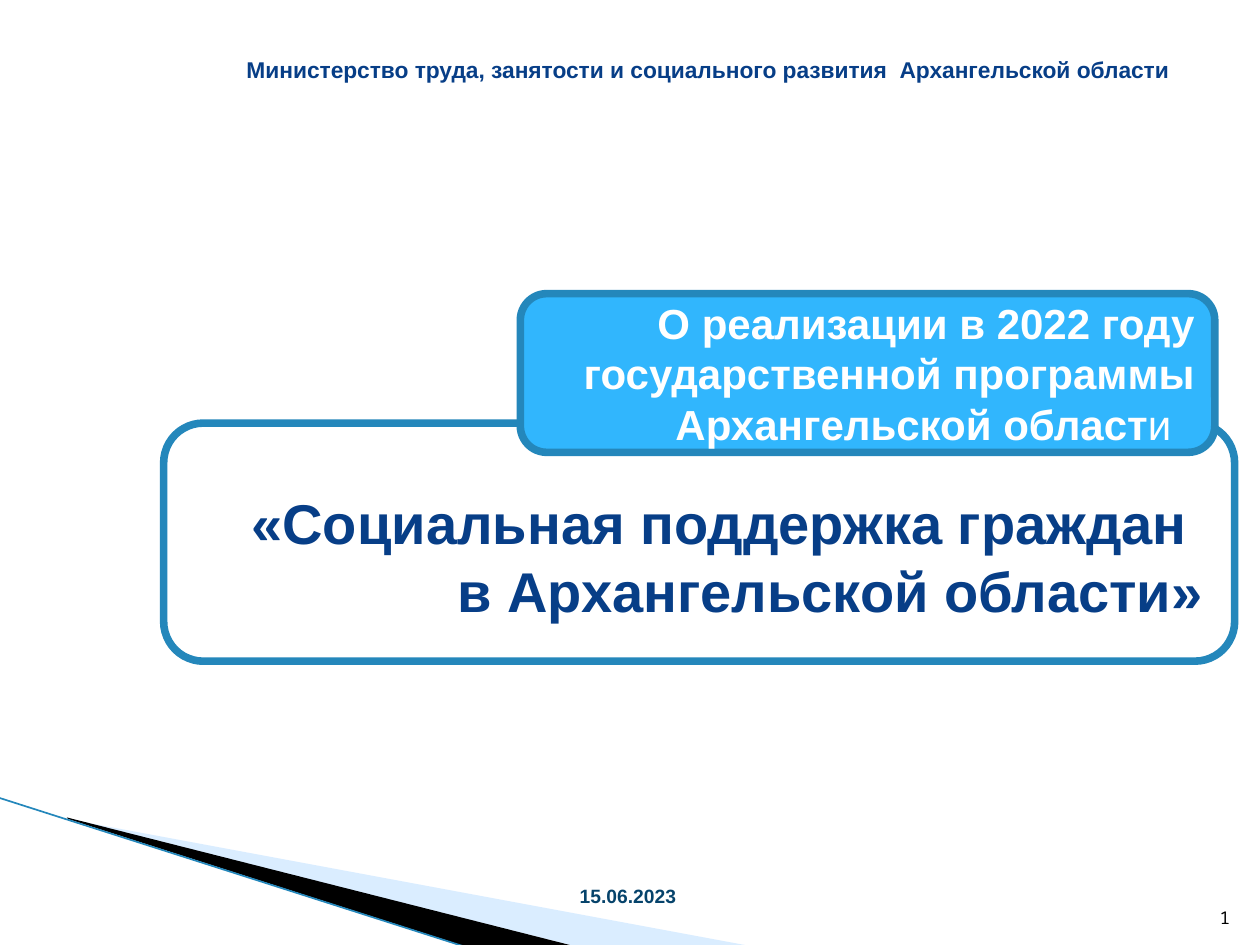
from lxml.etree import SubElement
from pptx import Presentation
from pptx.dml.color import RGBColor
from pptx.enum.shapes import MSO_CONNECTOR as Connector, MSO_SHAPE as Shape
from pptx.enum.text import MSO_ANCHOR as Anchor, MSO_AUTO_SIZE as AutoSize, PP_ALIGN as Align
from pptx.oxml.ns import qn
from pptx.util import Cm, Pt

NAVY, BLUE, SKY, WHITE, BLACK = "073E87", "2487BB", "31B6FD", "FFFFFF", "000000"


def color(value):
    return RGBColor.from_string(value)


def write(para, text, size=12, ink=NAVY, bold=True, font="Arial", align=Align.LEFT):
    para.alignment = align
    for index, line in enumerate(text.split("\n")):
        if index:
            para.add_line_break()
        span = para.add_run()
        span.text = line
        span.font.name = font
        span.font.size = Pt(size)
        span.font.bold = bold
        span.font.color.rgb = color(ink)


class SlideBuilder:
    border = 4.33

    def __init__(self, page):
        self.page = page

    def text(self, frame, text, wrap=True, anchor=Anchor.TOP, grow=True, **style):
        box = self.page.shapes.add_textbox(*map(Cm, frame))
        body = box.text_frame
        body.word_wrap = wrap
        body.vertical_anchor = anchor
        body.auto_size = AutoSize.SHAPE_TO_FIT_TEXT if grow else AutoSize.NONE
        write(body.paragraphs[0], text, **style)

    def panel(self, frame, fill=None):
        box = self.page.shapes.add_shape(Shape.ROUNDED_RECTANGLE, *map(Cm, frame))
        box.shadow.inherit = False
        if fill:
            box.fill.solid()
            box.fill.fore_color.rgb = color(fill)
        else:
            box.fill.background()
        box.line.color.rgb = color(BLUE)
        box.line.width = Pt(self.border)
        box.text_frame.word_wrap = True
        box.text_frame.vertical_anchor = Anchor.MIDDLE
        return box

    def polygon(self, points, fill, opacity=100):
        start, *rest = [(Cm(x), Cm(y)) for x, y in points]
        builder = self.page.shapes.build_freeform(*start)
        builder.add_line_segments(rest, close=True)
        wedge = builder.convert_to_shape()
        wedge.shadow.inherit = False
        wedge.fill.solid()
        wedge.fill.fore_color.rgb = color(fill)
        wedge.line.fill.background()
        if opacity < 100:
            tint = wedge.fill._xPr.find(".//" + qn("a:srgbClr"))
            SubElement(tint, qn("a:alpha")).set("val", str(opacity * 1000))

    def line(self, start, end, ink, width):
        edge = self.page.shapes.add_connector(Connector.STRAIGHT, *map(Cm, start + end))
        edge.line.color.rgb = color(ink)
        edge.line.width = Pt(width)
        SubElement(edge._element.spPr, qn("a:effectLst"))


def main():
    deck = Presentation()
    deck.slide_width, deck.slide_height = Cm(25.4), Cm(19.05)
    slide = SlideBuilder(deck.slides.add_slide(deck.slide_layouts[6]))

    slide.polygon([(1.4, 16.52), (15.12, 19.07), (11.58, 19.07)], "A3D3FF", opacity=40)
    slide.polygon([(1.35, 16.48), (11.6, 19.08), (9.45, 19.1), (1.37, 16.51)], BLACK)
    slide.line((-0.03, 16.08), (9.42, 19.1), BLUE, 0.95)

    slide.text((3.71, 9.73, 20.8, 3), "«Социальная поддержка граждан \nв Архангельской области»",
               size=32, align=Align.RIGHT)
    slide.text((11.43, 17.7, 2.46, 0.74), "15.06.2023", wrap=False,
               size=11, ink="06436B", align=Align.CENTER)
    slide.text((4.72, 0.99, 19.86, 0.81),
               "Министерство труда, занятости и социального развития  Архангельской области", size=13)

    slide.panel((3.3, 8.53, 21.59, 4.8))
    badge = slide.panel((10.49, 5.92, 14, 3.2), SKY)
    para = badge.text_frame.paragraphs[0]
    heading = dict(size=24, ink=WHITE, align=Align.RIGHT)
    write(para, "О реализации в 2022 году государственной программы Архангельской област", **heading)
    write(para, "и  ", bold=False, **heading)

    slide.text((24.03, 17.81, 1.02, 1.02), "1", anchor=Anchor.BOTTOM, grow=False,
               size=10, ink=BLACK, bold=False, font="Noto Sans Mono", align=Align.RIGHT)
    deck.save("out.pptx")


if __name__ == "__main__":
    main()
